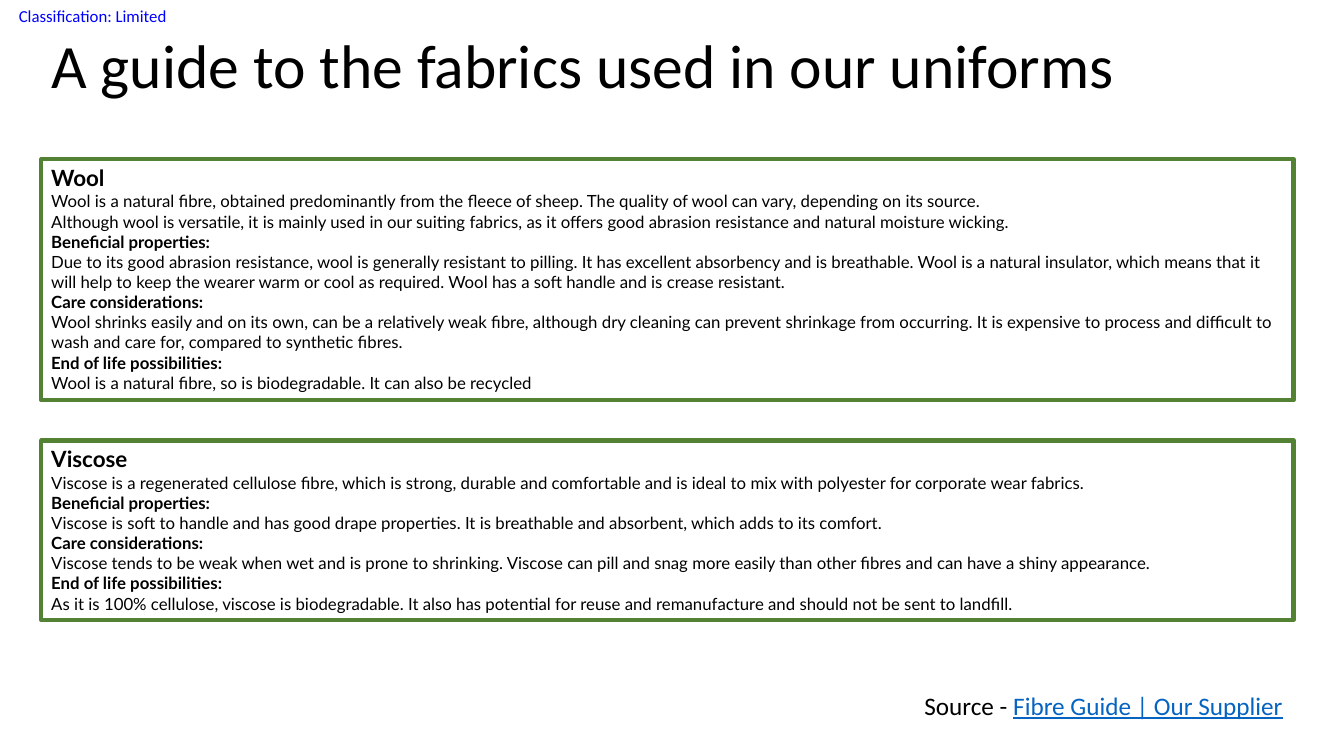
from pptx import Presentation
from pptx.dml.color import RGBColor
from pptx.enum.shapes import MSO_SHAPE
from pptx.enum.text import MSO_ANCHOR, PP_ALIGN
from pptx.util import Inches, Pt


def color(hex_value):
    return RGBColor.from_string(hex_value)


def add_span(para, text, size, font="Calibri", hex_value="000000", bold=False):
    span = para.add_run()
    span.text = text
    span.font.size = Pt(size)
    span.font.name = font
    span.font.bold = bold
    span.font.color.rgb = color(hex_value)
    return span


deck = Presentation()
deck.slide_width = Inches(13.33)
deck.slide_height = Inches(7.5)
page = deck.slides.add_slide(deck.slide_layouts[6])

# Classification label
label = page.shapes.add_textbox(Inches(0), Inches(0), Inches(1.84), Inches(0.32))
frame = label.text_frame
frame.word_wrap = True
frame.margin_left = frame.margin_right = frame.margin_top = frame.margin_bottom = 0
frame.vertical_anchor = MSO_ANCHOR.MIDDLE
para = frame.paragraphs[0]
para.alignment = PP_ALIGN.CENTER
add_span(para, "Classification: Limited", 12, hex_value="0000FF")

# Title
title = page.shapes.add_textbox(Inches(0.41), Inches(0.3), Inches(11.5), Inches(1.45))
title.text_frame.word_wrap = True
title.text_frame.vertical_anchor = MSO_ANCHOR.TOP
para = title.text_frame.paragraphs[0]
para.line_spacing = 0.9
add_span(para, "A guide to the fabrics used in our uniforms", 44)

# Fabric panels: name, top, height, then heading and lines of each section
fabrics = [
    ("Wool", 1.58, 2.39, [
        (None, [
            "Wool is a natural fibre, obtained predominantly from the fleece of sheep. "
            "The quality of wool can vary, depending on its source.",
            "Although wool is versatile, it is mainly used in our suiting fabrics, "
            "as it offers good abrasion resistance and natural moisture wicking."]),
        ("Beneficial properties:", [
            "Due to its good abrasion resistance, wool is generally resistant to pilling. "
            "It has excellent absorbency and is breathable. Wool is a natural insulator, "
            "which means that it will help to keep the wearer warm or cool as required. "
            "Wool has a soft handle and is crease resistant."]),
        ("Care considerations:", [
            "Wool shrinks easily and on its own, can be a relatively weak fibre, "
            "although dry cleaning can prevent shrinkage from occurring. It is expensive "
            "to process and difficult to wash and care for, compared to synthetic fibres."]),
        ("End of life possibilities:", [
            "Wool is a natural fibre, so is biodegradable. It can also be recycled"]),
    ]),
    ("Viscose", 4.37, 1.78, [
        (None, [
            "Viscose is a regenerated cellulose fibre, which is strong, durable and "
            "comfortable and is ideal to mix with polyester for corporate wear fabrics."]),
        ("Beneficial properties:", [
            "Viscose is soft to handle and has good drape properties. "
            "It is breathable and absorbent, which adds to its comfort."]),
        ("Care considerations:", [
            "Viscose tends to be weak when wet and is prone to shrinking. Viscose can pill "
            "and snag more easily than other fibres and can have a shiny appearance."]),
        ("End of life possibilities:", [
            "As it is 100% cellulose, viscose is biodegradable. It also has potential "
            "for reuse and remanufacture and should not be sent to landfill."]),
    ]),
]
for name, top, height, sections in fabrics:
    box = page.shapes.add_shape(
        MSO_SHAPE.RECTANGLE, Inches(0.41), Inches(top), Inches(12.42), Inches(height))
    box.shadow.inherit = False
    box.fill.background()
    box.line.color.rgb = color("548235")
    box.line.width = Pt(3)
    frame = box.text_frame
    frame.word_wrap = True
    frame.vertical_anchor = MSO_ANCHOR.TOP
    para = frame.paragraphs[0]
    para.alignment = PP_ALIGN.LEFT
    add_span(para, name, 16, "Lato", bold=True)
    for heading, lines in sections:
        for text in [heading] + lines:
            if text:
                para = frame.add_paragraph()
                para.alignment = PP_ALIGN.LEFT
                add_span(para, text, 12, "Lato", bold=text == heading)

# Source line
source = page.shapes.add_textbox(Inches(9.07), Inches(6.8), Inches(3.76), Inches(0.4))
source.text_frame.word_wrap = True
para = source.text_frame.paragraphs[0]
add_span(para, "Source - ", 18)
span = add_span(para, "Fibre Guide | Our Supplier", 18, hex_value="0563C1")
span.font.underline = True

deck.save("out.pptx")
